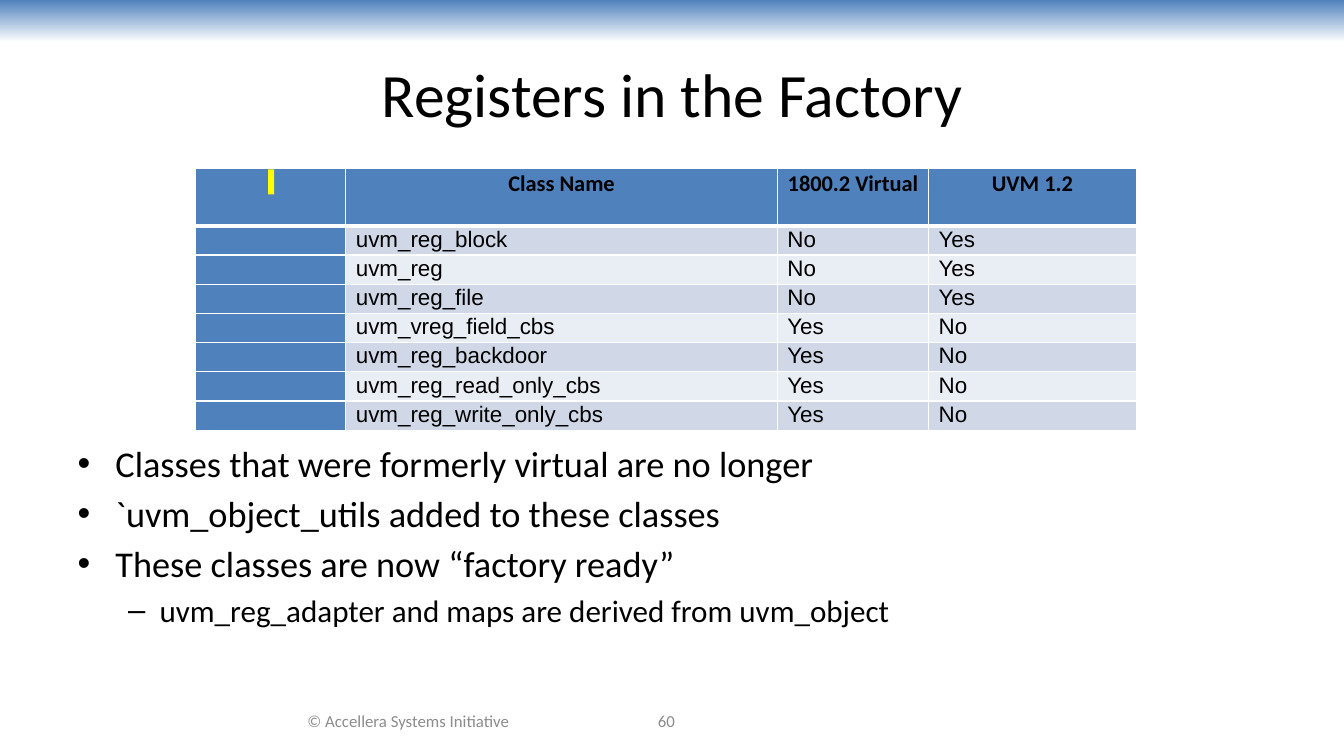
from lxml import etree
from pptx import Presentation
from pptx.dml.color import RGBColor
from pptx.enum import shapes, text
from pptx.oxml import ns
from pptx.util import Inches, Pt

BLUE = RGBColor(0x4F, 0x81, 0xBD)
BAND_DARK = RGBColor(0xD0, 0xD8, 0xE8)
BAND_LIGHT = RGBColor(0xE9, 0xED, 0xF4)
WHITE = RGBColor(0xFF, 0xFF, 0xFF)
BLACK = RGBColor(0, 0, 0)
GREY = RGBColor(0x8C, 0x8C, 0x8C)
YELLOW = RGBColor(0xFF, 0xFF, 0)

COLUMN_WIDTHS = [1.49, 4.28, 1.5, 2.06]
HEADER_HEIGHT, ROW_HEIGHT = 0.57, 0.29
HEADINGS = ["", "Class Name", "1800.2 Virtual", "UVM 1.2"]
CLASSES = [
    ("uvm_reg_block", "No", "Yes"),
    ("uvm_reg", "No", "Yes"),
    ("uvm_reg_file", "No", "Yes"),
    ("uvm_vreg_field_cbs", "Yes", "No"),
    ("uvm_reg_backdoor", "Yes", "No"),
    ("uvm_reg_read_only_cbs", "Yes", "No"),
    ("uvm_reg_write_only_cbs", "Yes", "No"),
]
POINTS = [
    ("Classes that were formerly virtual are no longer", 0),
    ("`uvm_object_utils added to these classes", 0),
    ("These classes are now “factory ready”", 0),
    ("uvm_reg_adapter and maps are derived from uvm_object", 1),
]


def write(paragraph, words, size, font="Calibri", color=BLACK, bold=False,
          align=None, before=None, after=None, spacing=None):
    paragraph.text = words
    paragraph.alignment = align
    paragraph.space_before = before
    paragraph.space_after = after
    paragraph.line_spacing = spacing
    paragraph.font.size = Pt(size)
    paragraph.font.name = font
    paragraph.font.bold = bold
    paragraph.font.color.rgb = color


def place(shape, left, top, width, height):
    shape.left, shape.top = Inches(left), Inches(top)
    shape.width, shape.height = Inches(width), Inches(height)


def add_rectangle(slide, left, top, width, height):
    rectangle = slide.shapes.add_shape(
        shapes.MSO_SHAPE.RECTANGLE, Inches(left), Inches(top),
        Inches(width), Inches(height))
    rectangle.shadow.inherit = False
    rectangle.line.fill.background()
    return rectangle


def add_top_band(slide):
    """Put the fading band behind everything else."""
    band = add_rectangle(slide, 0, 0, 13.33, 0.42)
    band.fill.gradient()
    band.fill.gradient_angle = 270
    for stop, position, color in zip(band.fill.gradient_stops, (0, 1), (BLUE, WHITE)):
        stop.position = position
        stop.color.rgb = color
    slide.shapes._spTree.insert(2, band._element)


def add_title(slide, words):
    title = slide.shapes.title
    place(title, 0.67, 0.3, 12, 1.25)
    title.text_frame.vertical_anchor = text.MSO_ANCHOR.MIDDLE
    write(title.text_frame.paragraphs[0], words, 44, align=text.PP_ALIGN.CENTER)


def add_points(slide):
    body = slide.placeholders[1]
    place(body, 0.67, 4.33, 11.44, 1.75)
    frame = body.text_frame
    frame.auto_size = text.MSO_AUTO_SIZE.NONE
    for index, (words, level) in enumerate(POINTS):
        paragraph = frame.add_paragraph() if index else frame.paragraphs[0]
        paragraph.level = level
        write(paragraph, words, 22.2 if level else 25.9,
              before=Pt(4.5 if index else 0))


def set_borders(cell, bottom):
    """Draw white lines round a cell, which must come before its fill."""
    properties = cell._tc.get_or_add_tcPr()
    for side, points in (("L", 1), ("R", 1), ("T", 1), ("B", bottom)):
        line = etree.SubElement(properties, ns.qn(f"a:ln{side}"), w=str(Pt(points)))
        solid = etree.SubElement(line, ns.qn("a:solidFill"))
        etree.SubElement(solid, ns.qn("a:srgbClr"), val=str(WHITE))


def fill_cell(cell, words, fill, bottom=1, **format):
    cell.margin_left = cell.margin_right = Inches(0.1)
    cell.margin_top = cell.margin_bottom = 0
    set_borders(cell, bottom)
    cell.fill.solid()
    cell.fill.fore_color.rgb = fill
    write(cell.text_frame.paragraphs[0], words, 16,
          after=Pt(8), spacing=1.05, **format)


def add_class_table(slide):
    height = HEADER_HEIGHT + ROW_HEIGHT * len(CLASSES)
    table = slide.shapes.add_table(
        len(CLASSES) + 1, len(HEADINGS), Inches(1.94), Inches(1.67),
        Inches(sum(COLUMN_WIDTHS)), Inches(height)).table
    table.first_row = table.horz_banding = False
    for column, width in zip(table.columns, COLUMN_WIDTHS):
        column.width = Inches(width)
    for row in table.rows:
        row.height = Inches(ROW_HEIGHT)
    table.rows[0].height = Inches(HEADER_HEIGHT)

    for column, heading in enumerate(HEADINGS):
        fill_cell(table.cell(0, column), heading, BLUE, bottom=3, bold=True,
                  align=text.PP_ALIGN.CENTER)
    for row, values in enumerate(CLASSES, 1):
        band = BAND_DARK if row % 2 else BAND_LIGHT
        for column, value in enumerate(("", *values)):
            fill_cell(table.cell(row, column), value, band if column else BLUE,
                      font="Arial")


def add_header_mark(slide):
    mark = add_rectangle(slide, 2.66, 1.68, 0.06, 0.25)
    mark.fill.solid()
    mark.fill.fore_color.rgb = YELLOW


def add_footer(slide, words, left, width):
    footer = slide.shapes.add_textbox(
        Inches(left), Inches(6.95), Inches(width), Inches(0.4))
    footer.text_frame.word_wrap = True
    footer.text_frame.vertical_anchor = text.MSO_ANCHOR.MIDDLE
    write(footer.text_frame.paragraphs[0], words, 12, color=GREY,
          align=text.PP_ALIGN.CENTER)


def main():
    deck = Presentation()
    deck.slide_width, deck.slide_height = Inches(13.33), Inches(7.5)
    slide = deck.slides.add_slide(deck.slide_layouts[1])
    add_top_band(slide)
    add_title(slide, "Registers in the Factory")
    add_points(slide)
    add_footer(slide, "© Accellera Systems Initiative", 2.44, 3.22)
    add_footer(slide, "60", 5.33, 2.56)
    add_class_table(slide)
    add_header_mark(slide)
    deck.save("out.pptx")


if __name__ == "__main__":
    main()
